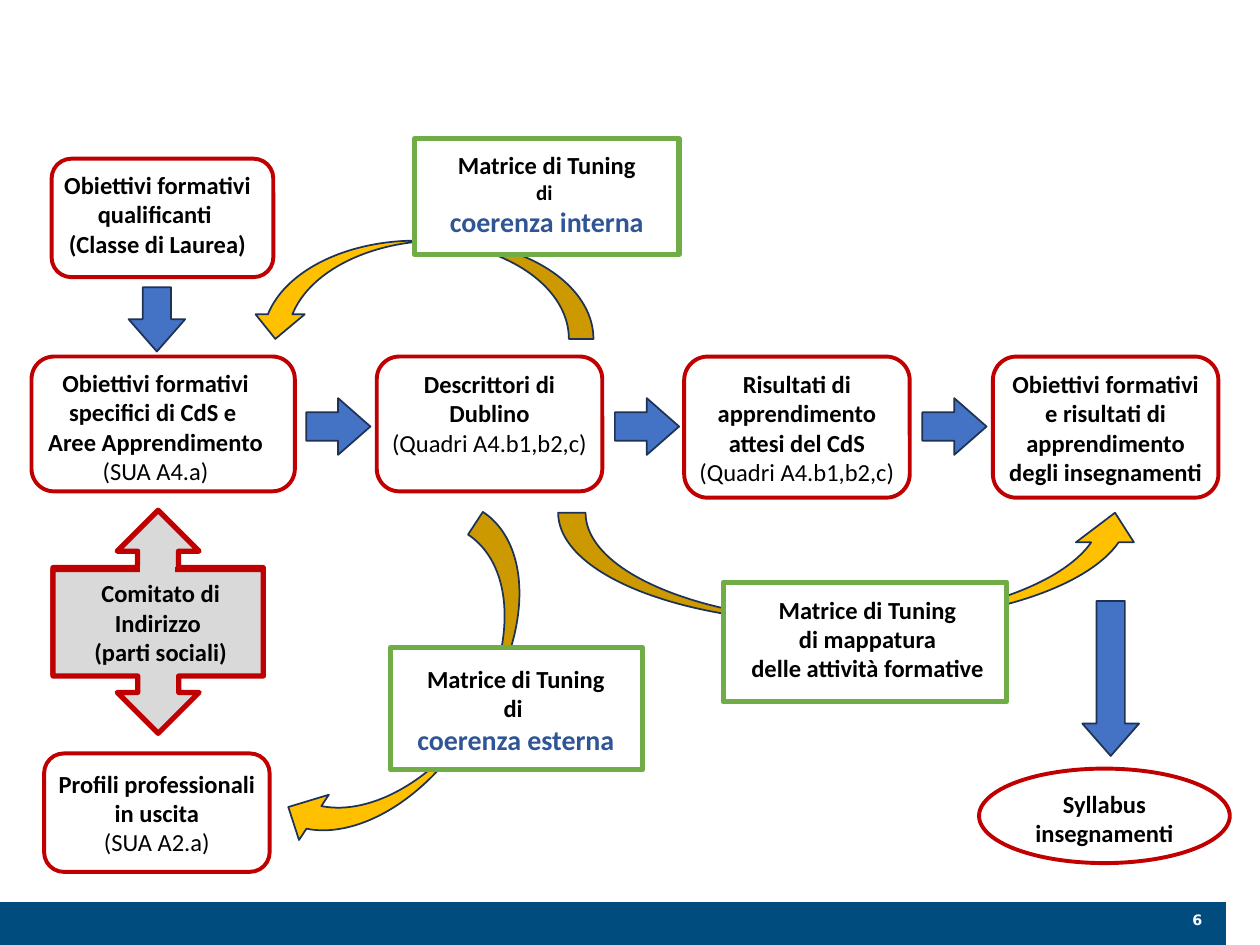
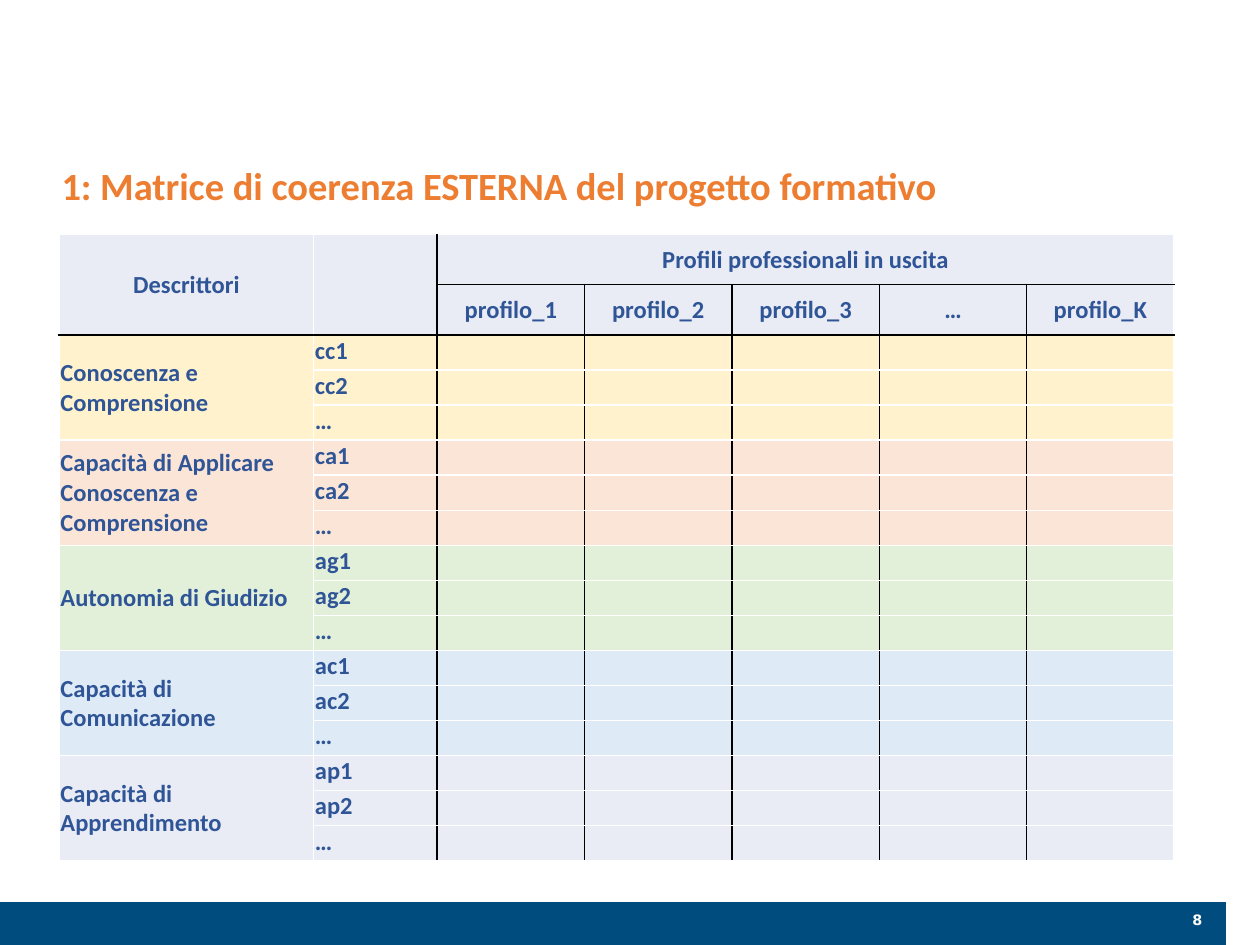
"""Build two slides: the flow of study programme design and the external coherence matrix."""
import pptx
import pptx.util
import pptx.dml.color
import pptx.enum.shapes
import pptx.enum.text
import pptx.oxml.ns
from lxml import etree

PX = 9144
Pt = pptx.util.Pt
KIND = pptx.enum.shapes.MSO_SHAPE
ALIGN = pptx.enum.text.PP_ALIGN
MID = pptx.enum.text.MSO_ANCHOR.MIDDLE
qn = pptx.oxml.ns.qn
tint = pptx.dml.color.RGBColor.from_string

RED, GREEN, NAVY, BLUE = "C00000", "70AD47", "1E3256", "4472C4"
GOLD, GREY, INK, WHITE, BLACK = "FFC000", "D9D9D9", "2F5597", "FFFFFF", "000000"
BASE = {"name": "Calibri", "size": Pt(14), "bold": True}
PLAIN = {"bold": False}


def draw(slide, kind, spot, fill=None, line=None, wide=1, turn=0, flip=None, adj=()):
    """Add a preset shape with flat fill and line."""
    shape = slide.shapes.add_shape(kind, *[n * PX for n in spot])
    shape.shadow.inherit = False
    shape.rotation = turn
    if flip:
        shape._element.spPr.get_or_add_xfrm().set(flip, "1")
    for i, part in enumerate(adj):
        shape.adjustments[i] = part
    if fill:
        shape.fill.solid()
        shape.fill.fore_color.rgb = tint(fill)
    else:
        shape.fill.background()
    if line:
        shape.line.color.rgb = tint(line)
        shape.line.width = Pt(wide)
    else:
        shape.line.fill.background()
    return shape


def write(frame, paras, hue=BLACK, align=ALIGN.CENTER, **look):
    """Fill a text frame with paragraphs of (text, format) runs."""
    frame.word_wrap = True
    for i, runs in enumerate(paras):
        para = frame.add_paragraph() if i else frame.paragraphs[0]
        para.alignment = align
        for text, extra in runs:
            form = {**BASE, "hue": hue, **look, **extra}
            shade = form.pop("hue")
            for j, piece in enumerate(text.split("\n")):
                if j:
                    para.add_line_break()
                if piece:
                    run = para.add_run()
                    run.text = piece
                    run.font.color.rgb = tint(shade)
                    for key, value in form.items():
                        setattr(run.font, key, value)


deck = pptx.Presentation()
deck.slide_width, deck.slide_height = 1000 * PX, 750 * PX
flow, grid = [deck.slides.add_slide(deck.slide_layouts[6]) for _ in range(2)]

for slide, num in ((flow, "6"), (grid, "8")):
    draw(slide, KIND.RECTANGLE, (0, 716, 973, 34), "004C7E")
    box = slide.shapes.add_textbox(*[n * PX for n in (853, 718, 111, 24)])
    write(box.text_frame, [[(num, {})]], WHITE, ALIGN.RIGHT, name="DejaVu Sans", size=Pt(8.2))

# Slide 1: arrows and boxes
CURVE = KIND.CURVED_DOWN_ARROW
draw(flow, CURVE, (443, 407, 465, 87), GOLD, NAVY, flip="flipV", adj=(0.25, 0.53, 0.27))
for top, turn in ((405, 0), (452, 180)):
    draw(flow, KIND.UP_ARROW_CALLOUT, (42, top, 167, 130), GREY, RED, 3, turn)
draw(flow, CURVE, (199, 191, 272, 78), GOLD, NAVY, flip="flipH")
draw(flow, CURVE, (185, 513, 302, 86), GOLD, NAVY, turn=123.4)

seam = flow.shapes.add_connector(
    pptx.enum.shapes.MSO_CONNECTOR.STRAIGHT, 111 * PX, 452 * PX, 139 * PX, 452 * PX)
seam.line.color.rgb = tint(GREY)
seam.line.width = Pt(4.5)
etree.SubElement(seam._element.spPr, qn("a:effectLst"))

steps = [(left, 313, 45, 51, 270) for left in (246, 491, 735)]
for *spot, turn in steps + [(102, 228, 45, 51, 0), (859, 477, 45, 123, 0)]:
    draw(flow, KIND.DOWN_ARROW, spot, BLUE, NAVY, turn=turn, adj=(0.5, 0.57))

for spot in ((35, 598, 179, 94), (41, 126, 176, 94), (25, 283, 209, 107),
             (299, 283, 179, 107), (543, 283, 179, 112), (788, 283, 179, 112)):
    draw(flow, KIND.ROUNDED_RECTANGLE, spot, None, RED, 2.25)
for spot in ((329, 110, 210, 92), (310, 514, 200, 97), (574, 462, 225, 95)):
    draw(flow, KIND.RECTANGLE, spot, WHITE, GREEN, 3)

oval = draw(flow, KIND.OVAL, (777, 610, 199, 75), None, RED, 2.25)
oval.text_frame.vertical_anchor = pptx.enum.text.MSO_ANCHOR.TOP
write(oval.text_frame, [[("Syllabus insegnamenti", {})]])

BIG = {"size": Pt(16), "hue": INK}
HEAD = [("Matrice di Tuning", {})]
QUAD = [("(Quadri A4.b1,b2,c)", PLAIN)]
notes = [
    ((35, 605, 179, 81), [[("Profili professionali in uscita", {})], [("(SUA A2.a)", PLAIN)]]),
    ((37, 130, 176, 81), [[("Obiettivi formativi qualificanti ", {})],
                          [("(Classe di Laurea)", {})]]),
    ((19, 287, 209, 104), [[("Obiettivi formativi specifici di CdS e \nAree Apprendimento", {})],
                           [("(SUA A4.a)", PLAIN)]]),
    ((35, 454, 185, 81), [[("Comitato di Indirizzo \n(parti sociali)", {})]]),
    ((299, 288, 179, 65), [[("Descrittori di Dublino", {})], QUAD]),
    ((543, 288, 179, 104), [[("Risultati di apprendimento attesi del CdS", {})], QUAD]),
    ((788, 288, 179, 104), [[("Obiettivi formativi e risultati di apprendimento "
                              "degli insegnamenti", {})]]),
    ((329, 114, 210, 81), [HEAD, [("di \n", {"size": Pt(12)}), ("coerenza interna", BIG)]]),
    ((313, 522, 193, 97), [HEAD, [("di \n", {}), ("coerenza esterna", BIG)]]),
    ((576, 467, 225, 60), [HEAD, [("di mappatura\ndelle attività formative", {})]]),
]
for spot, paras in notes:
    box = flow.shapes.add_textbox(*[n * PX for n in spot])
    write(box.text_frame, paras)

# Slide 2: title and matrix
box = grid.shapes.add_textbox(*[n * PX for n in (39, 124, 860, 47)])
write(box.text_frame, [[("1: Matrice di coerenza ESTERNA del progetto formativo", {})]],
      "ED7D31", ALIGN.LEFT, size=Pt(22))

areas = [("Conoscenza e Comprensione", "cc", "FFF2CC"),
         ("Capacità di Applicare Conoscenza e Comprensione", "ca", "FBE5D6"),
         ("Autonomia di Giudizio", "ag", "E2F0D9"),
         ("Capacità di Comunicazione", "ac", "DEEBF7"),
         ("Capacità di Apprendimento", "ap", "E9EBF5")]
words = {(0, 0): "Descrittori", (0, 2): "Profili professionali in uscita"}
for i, name in enumerate(("profilo_1", "profilo_2", "profilo_3", "…", "profilo_K")):
    words[1, i + 2] = name
for i, (name, code, _) in enumerate(areas):
    top = 2 + 3 * i
    words[top, 0] = name
    for j, label in enumerate((code + "1", code + "2", "…")):
        words[top + j, 1] = label

table = grid.shapes.add_table(17, 7, *[n * PX for n in (47, 186, 885, 497)]).table
table.first_row = table.horz_banding = False
for col, wide in zip(table.columns, [202, 98] + [117] * 5):
    col.width = wide * PX
for r, row in enumerate(table.rows):
    row.height = 40 * PX if r < 2 else 417 * PX // 15

for r in range(17):
    for c in range(7):
        cell = table.cell(r, c)
        dark = {"L": c == 2 or (c > 2 and r > 0),
                "R": c == 1 or (1 < c < 6 and r > 0),
                "T": r == 2 or (r == 1 and c > 1),
                "B": r < 2}
        props = cell._tc.get_or_add_tcPr()
        for side, black in dark.items():
            edge = etree.SubElement(props, qn("a:ln" + side), w=str(Pt(1)))
            paint = etree.SubElement(edge, qn("a:solidFill"))
            etree.SubElement(paint, qn("a:srgbClr"), val=BLACK if black else WHITE)
        cell.fill.solid()
        cell.fill.fore_color.rgb = tint(areas[(r - 2) // 3][2] if r > 1 else "E9EBF5")
        form = {"margin_left": PX, "margin_right": PX, "margin_top": PX, "margin_bottom": 0}
        if r < 2 or c == 0:
            form["vertical_anchor"] = MID
        for key, value in form.items():
            setattr(cell, key, value)
        if (r, c) in words:
            write(cell.text_frame, [[(words[r, c], {})]], INK,
                  ALIGN.CENTER if r < 2 else ALIGN.LEFT)
        else:
            etree.SubElement(cell.text_frame.paragraphs[0]._p, qn("a:endParaRPr"), sz="1400")

spans = [(0, 0, 1, 0), (0, 1, 1, 1), (0, 2, 0, 6)]
spans += [(top, 0, top + 2, 0) for top in range(2, 17, 3)]
for top, left, low, right in spans:
    table.cell(top, left).merge(table.cell(low, right))

deck.save("out.pptx")
